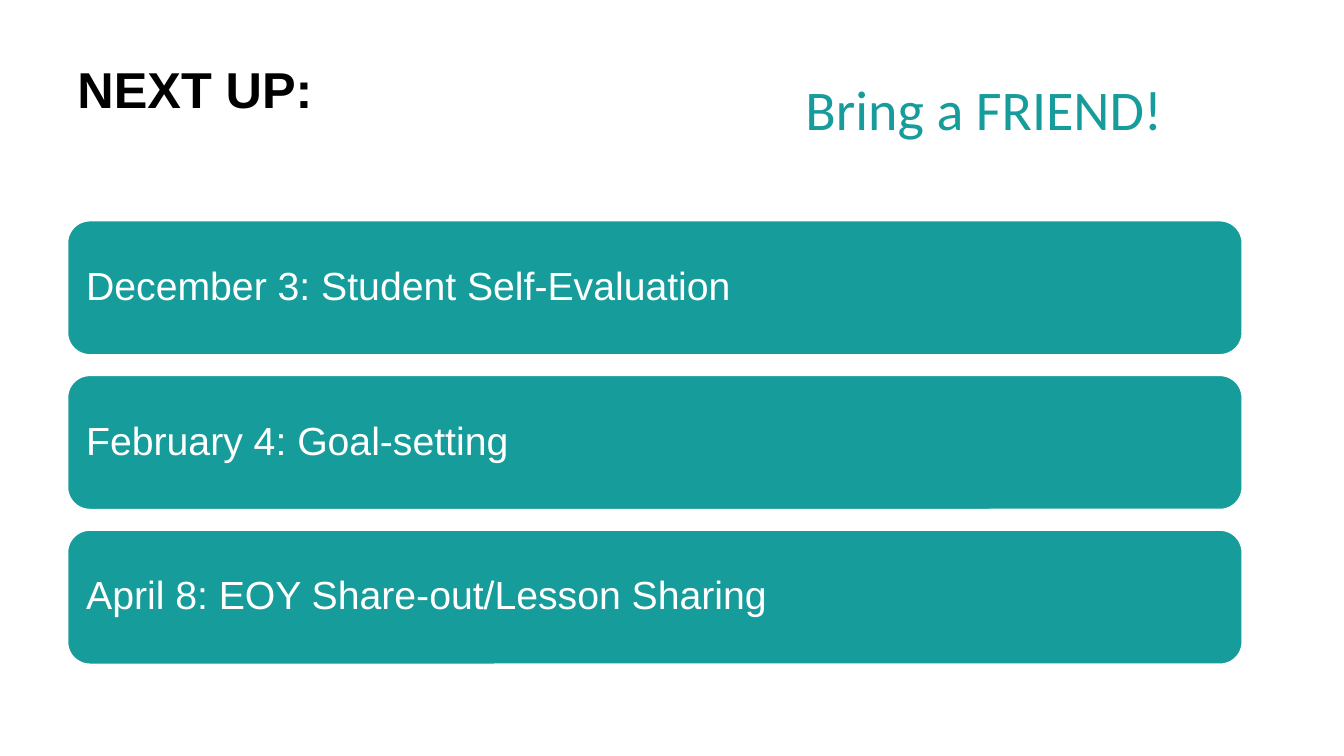
from pptx import Presentation
from pptx.dml.color import RGBColor
from pptx.enum.shapes import MSO_SHAPE
from pptx.enum.text import MSO_ANCHOR, PP_ALIGN
from pptx.util import Inches, Pt

TEAL = RGBColor(0x16, 0x9C, 0x9A)
WHITE = RGBColor(0xFF, 0xFF, 0xFF)
BLACK = RGBColor(0x00, 0x00, 0x00)

LEFT, WIDTH = 0.67, 11.65
FIRST_TOP, LAST_TOP, CARD_HEIGHT = 2.19, 5.26, 1.33
SESSIONS = [
    "December 3: Student Self-Evaluation",
    "February 4: Goal-setting",
    "April 8: EOY Share-out/Lesson Sharing",
]
INSETS = ("margin_left", "margin_top", "margin_right", "margin_bottom")


def write(frame, text, color, font_format, frame_format, line_spacing=1.0):
    for name, value in {"word_wrap": True, **frame_format}.items():
        setattr(frame, name, value)
    paragraph = frame.paragraphs[0]
    paragraph.alignment = PP_ALIGN.LEFT
    paragraph.line_spacing = line_spacing
    run = paragraph.add_run()
    run.text = text
    run.font.color.rgb = color
    for name, value in font_format.items():
        setattr(run.font, name, value)


def add_label(slide, box, *text_args):
    label = slide.shapes.add_textbox(*map(Inches, box))
    write(label.text_frame, *text_args)


def add_session(slide, top, session):
    card = slide.shapes.add_shape(
        MSO_SHAPE.ROUNDED_RECTANGLE,
        Inches(LEFT), Inches(top), Inches(WIDTH), Inches(CARD_HEIGHT),
    )
    card.shadow.inherit = False
    card.fill.solid()
    card.fill.fore_color.rgb = TEAL
    card.line.color.rgb = WHITE
    card.line.width = Pt(1)
    frame_format = dict.fromkeys(INSETS, Inches(0.12))
    frame_format["vertical_anchor"] = MSO_ANCHOR.MIDDLE
    write(card.text_frame, session, WHITE,
          {"name": "Arial", "size": Pt(28)}, frame_format, 0.9)


def main():
    deck = Presentation()
    deck.slide_width, deck.slide_height = Inches(13.33), Inches(7.5)
    slide = deck.slides.add_slide(deck.slide_layouts[6])

    add_label(slide, (LEFT, 0.6, WIDTH, 1.24), "NEXT UP:", BLACK,
              {"name": "Arial", "size": Pt(36), "bold": True},
              {"vertical_anchor": MSO_ANCHOR.TOP}, 0.9)

    pitch = (LAST_TOP - FIRST_TOP) / (len(SESSIONS) - 1)
    for index, session in enumerate(SESSIONS):
        add_session(slide, FIRST_TOP + index * pitch, session)

    add_label(slide, (7.89, 0.69, 4.43, 0.77), "Bring a FRIEND!", TEAL,
              {"name": "Calibri", "size": Pt(40)}, {})

    deck.save("out.pptx")


if __name__ == "__main__":
    main()
